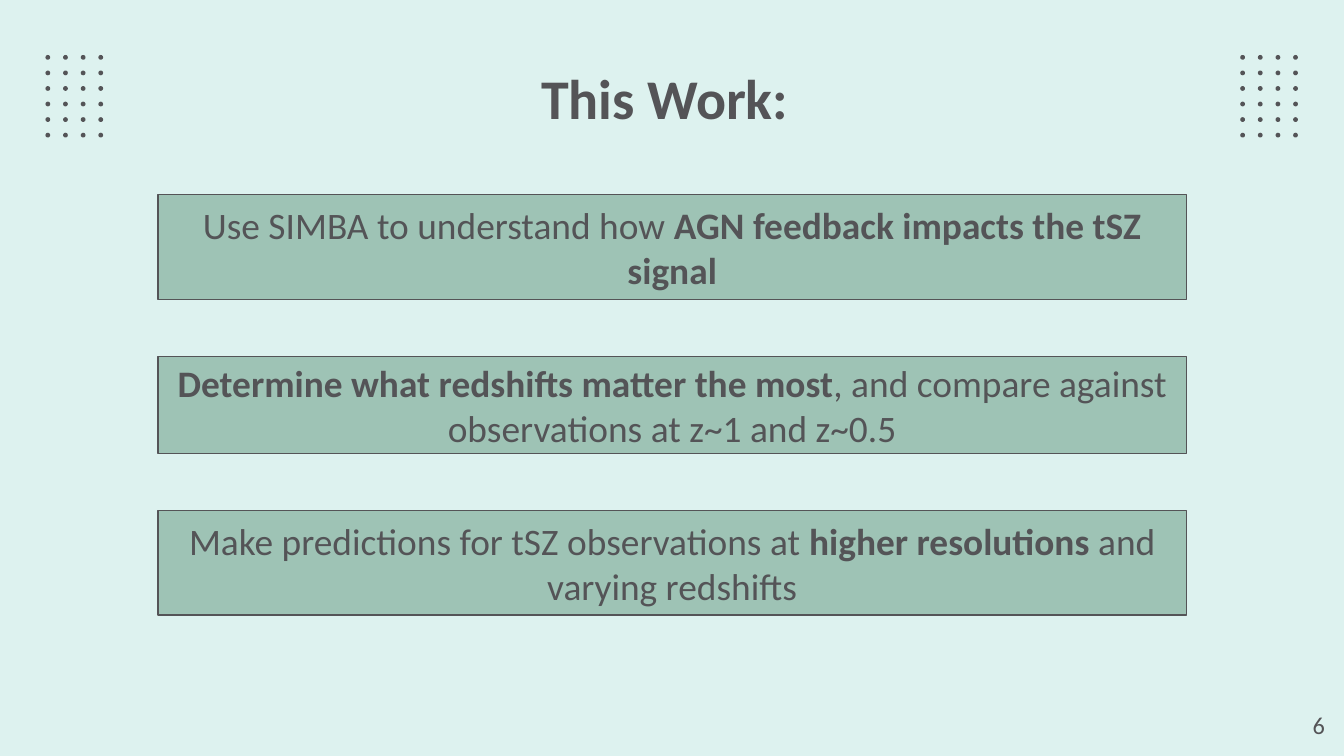
import pptx
import pptx.dml.color
import pptx.enum.shapes
import pptx.enum.text
import pptx.util
from pptx.util import Cm

INK, PAPER, GREEN = "545457", "DDF2EF", "9EC3B5"
ALIGN = pptx.enum.text.PP_ALIGN
ANCHOR = pptx.enum.text.MSO_ANCHOR
SHAPE = pptx.enum.shapes.MSO_SHAPE

# Each card: height in cm, then its (text, bold) runs
CARDS = [
    (1.98, [("Use SIMBA to understand how ", False),
            ("AGN feedback impacts the tSZ signal", True)]),
    (1.83, [("Determine what redshifts matter the most", True),
            (", and compare against observations at z~1 and z~0.5", False)]),
    (1.98, [("Make predictions for tSZ observations at ", False),
            ("higher resolutions", True),
            (" and varying redshifts", False)]),
]


def set_color(fmt, color):
    """Give a fill format a solid hex colour."""
    fmt.solid()
    fmt.fore_color.rgb = pptx.dml.color.RGBColor.from_string(color)


def write(sp, runs, size, align, anchor, margins):
    """Fill a shape with (text, bold) runs; margins are left, top, right, bottom."""
    tf = sp.text_frame
    frame = {"word_wrap": True, "vertical_anchor": anchor}
    sides = ("margin_left", "margin_top", "margin_right", "margin_bottom")
    frame.update(zip(sides, map(Cm, margins)))
    for name, value in frame.items():
        setattr(tf, name, value)
    p = tf.paragraphs[0]
    p.alignment = align
    for text, bold in runs:
        r = p.add_run()
        r.text = text
        font = {"name": "Calibri", "size": pptx.util.Pt(size), "bold": bold}
        for name, value in font.items():
            setattr(r.font, name, value)
        set_color(r.font.fill, INK)


def add_box(shapes, kind, x, y, w, h, fill):
    sp = shapes.add_shape(kind, Cm(x), Cm(y), Cm(w), Cm(h))
    sp.shadow.inherit = False
    set_color(sp.fill, fill)
    return sp


def add_dot_grid(s, x, y, w, h, cols=4, rows=6, dot=0.09):
    group = s.shapes.add_group_shape()
    dx, dy = (w - dot) / (cols - 1), (h - dot) / (rows - 1)
    for row in range(rows):
        for col in range(cols):
            sp = add_box(group.shapes, SHAPE.OVAL, x + col * dx, y + row * dy,
                         dot, dot, INK)
            sp.line.fill.background()


def add_label(s, x, y, w, h, text, size, align, bold=False, top=0.25):
    sp = s.shapes.add_textbox(Cm(x), Cm(y), Cm(w), Cm(h))
    write(sp, [(text, bold)], size, align, ANCHOR.TOP, (0.25, top, 0.25, 0.25))


def add_cards(s, x, y, w, h):
    """Stack the cards with equal gaps that fill the height."""
    gap = (h - sum(height for height, _ in CARDS)) / (len(CARDS) - 1)
    for height, runs in CARDS:
        sp = add_box(s.shapes, SHAPE.RECTANGLE, x, y, w, height, GREEN)
        set_color(sp.line.fill, INK)
        sp.line.width = pptx.util.Pt(0.75)
        write(sp, runs, 20, ALIGN.CENTER, ANCHOR.MIDDLE, (0, 0, 0, 0))
        y += height + gap


def main():
    prs = pptx.Presentation()
    prs.slide_width, prs.slide_height = Cm(25.4), Cm(14.29)
    s = prs.slides.add_slide(prs.slide_layouts[6])
    set_color(s.background.fill, PAPER)
    for x in (0.86, 23.44):
        add_dot_grid(s, x, 1.04, 1.09, 1.56)
    add_label(s, 0.86, 1.02, 23.65, 1.6, "This Work: ", 30, ALIGN.CENTER,
              bold=True, top=0.18)
    add_cards(s, 2.99, 3.68, 19.43, 7.95)
    add_label(s, 23.77, 13.18, 1.52, 1.09, "6", 13, ALIGN.RIGHT)
    prs.save("out.pptx")


if __name__ == "__main__":
    main()
